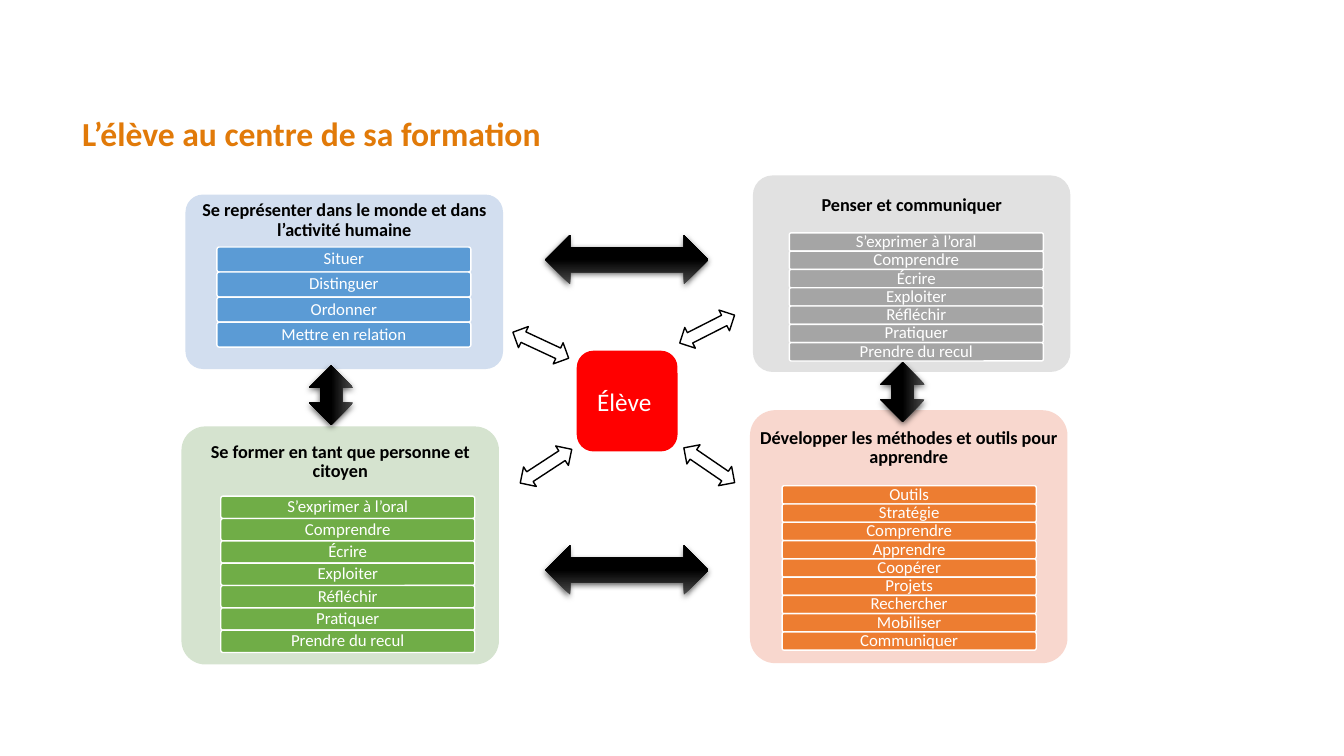
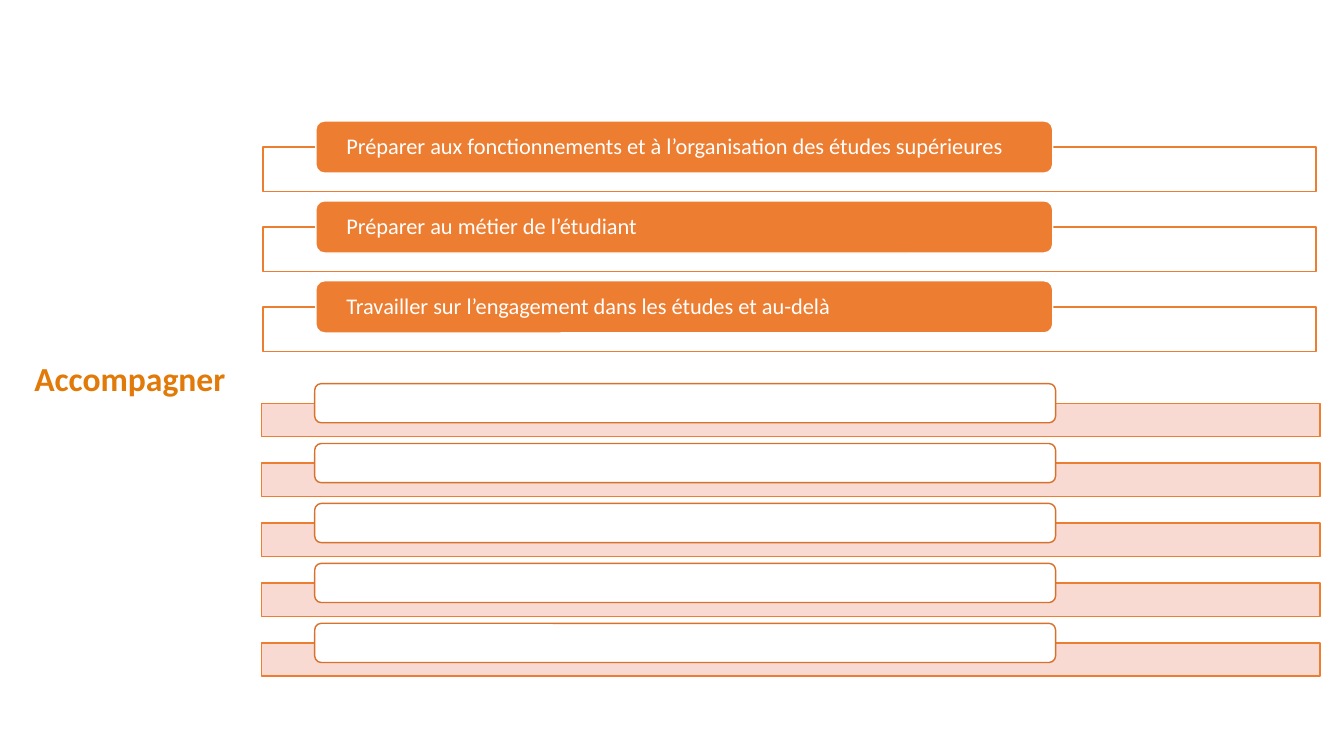
import lxml.etree
import pptx
import pptx.dml.color
import pptx.enum.shapes
import pptx.enum.text
import pptx.oxml.ns
import pptx.util

Pt = pptx.util.Pt
RGBColor = pptx.dml.color.RGBColor
Shapes = pptx.enum.shapes.MSO_SHAPE
Align = pptx.enum.text.PP_ALIGN
Anchor = pptx.enum.text.MSO_ANCHOR
qn = pptx.oxml.ns.qn

FONT = "Calibri"
BLACK = RGBColor(0x00, 0x00, 0x00)
CHARCOAL = RGBColor(0x4B, 0x4B, 0x4B)
WHITE = RGBColor(0xFF, 0xFF, 0xFF)
RED = RGBColor(0xFF, 0x00, 0x00)
TITLE_ORANGE = RGBColor(0xE1, 0x7A, 0x09)
ORANGE = RGBColor(0xED, 0x7D, 0x31)
DARK_ORANGE = RGBColor(0xD7, 0x71, 0x2C)
PALE_ORANGE = RGBColor(0xF8, 0xD7, 0xCE)
BLUE = RGBColor(0x5B, 0x9B, 0xD5)
PALE_BLUE = RGBColor(0xD2, 0xDE, 0xEF)
GREEN = RGBColor(0x70, 0xAD, 0x47)
PALE_GREEN = RGBColor(0xD5, 0xE3, 0xCF)
GREY = RGBColor(0xA5, 0xA5, 0xA5)
PALE_GREY = RGBColor(0xE1, 0xE1, 0xE1)

SPEAKING_SKILLS = [
    "S’exprimer à l’oral", "Comprendre", "Écrire", "Exploiter",
    "Réfléchir", "Pratiquer", "Prendre du recul",
]
WORLD_SKILLS = ["Situer", "Distinguer", "Ordonner", "Mettre en relation"]
METHOD_SKILLS = [
    "Outils", "Stratégie", "Comprendre", "Apprendre", "Coopérer",
    "Projets", "Rechercher", "Mobiliser", "Communiquer",
]


def points(box):
    return [Pt(round(length, 2)) for length in box]


def write_text(shape, text, size, color, bold=False, align=Align.CENTER,
               anchor=Anchor.MIDDLE, margins=(2, 0), spacing=0.9):
    frame = shape.text_frame
    frame.word_wrap = True
    frame.vertical_anchor = anchor
    frame.margin_left = frame.margin_right = Pt(margins[0])
    frame.margin_top = frame.margin_bottom = Pt(margins[1])
    paragraph = frame.paragraphs[0]
    paragraph.alignment = align
    paragraph.line_spacing = spacing
    run = paragraph.add_run()
    run.text = text
    run.font.name = FONT
    run.font.size = Pt(size)
    run.font.bold = bold
    run.font.color.rgb = color


def add_box(slide, kind, box, fill, line=None, adjustment=None):
    shape = slide.shapes.add_shape(kind, *points(box))
    shape.fill.solid()
    shape.fill.fore_color.rgb = fill
    if line is None:
        shape.line.fill.background()
    else:
        shape.line.color.rgb = line
        shape.line.width = Pt(1)
    shape.shadow.inherit = False
    if adjustment is not None:
        shape.adjustments[0] = adjustment
    return shape


def add_titled_slide(presentation, title, box, align):
    slide = presentation.slides.add_slide(presentation.slide_layouts[5])
    placeholder = slide.shapes.title
    placeholder.left, placeholder.top, placeholder.width, placeholder.height = points(box)
    write_text(placeholder, title, 24, TITLE_ORANGE, True, align,
               Anchor.TOP, (7.2, 3.6), 1.0)
    return slide


def add_skill_card(slide, box, heading, heading_height, skills, row_offset, row_height,
                   pale, strong):
    left, top, width, height = box
    add_box(slide, Shapes.ROUNDED_RECTANGLE, box, pale, adjustment=0.1)
    heading_box = slide.shapes.add_textbox(*points((left, top, width, heading_height)))
    write_text(heading_box, heading, 13, BLACK, True, margins=(3.6, 3.6))
    for index, skill in enumerate(skills):
        row_box = (left + row_offset[0], top + row_offset[1] + index * row_height,
                   width * 0.8, row_height)
        row = add_box(slide, Shapes.ROUNDED_RECTANGLE, row_box, strong, WHITE, 0.1)
        write_text(row, skill, 12, WHITE)


def add_white_arrow(slide, box, rotation):
    arrow = add_box(slide, Shapes.LEFT_RIGHT_ARROW, box, WHITE, BLACK)
    arrow.rotation = rotation


def add_black_arrow(slide, box, rotation):
    arrow = add_box(slide, Shapes.LEFT_RIGHT_ARROW, box, BLACK)
    arrow.rotation = rotation
    arrow.fill.gradient()
    arrow.fill.gradient_angle = 270
    for stop, color, position in zip(arrow.fill.gradient_stops, (CHARCOAL, BLACK), (0, 0.5)):
        stop.color.rgb = color
        stop.position = position
    effects = arrow.element.spPr.find(qn("a:effectLst"))
    shadow = lxml.etree.SubElement(
        effects, qn("a:outerShdw"), blurRad=str(Pt(4.5)), dist=str(Pt(1.5)),
        dir="5400000", rotWithShape="0")
    color = lxml.etree.SubElement(shadow, qn("a:srgbClr"), val=str(BLACK))
    lxml.etree.SubElement(color, qn("a:alpha"), val="63000")


def add_band_list(slide, box, labels, band_fill, tab_fill, tab_line):
    left, top, width, height = box
    tab_height = height / ((len(labels) - 1) * 1.53 + 1.35)
    for index, label in enumerate(labels):
        tab_top = top + index * tab_height * 1.53
        band_box = (left, tab_top + tab_height / 2, width, tab_height * 0.85)
        band = add_box(slide, Shapes.RECTANGLE, band_box, band_fill, ORANGE)
        color = band.element.spPr.find(qn("a:solidFill"))[0]
        lxml.etree.SubElement(color, qn("a:alpha"), val="90000")
        tab_box = (left + width * 0.05, tab_top, width * 0.7, tab_height)
        tab = add_box(slide, Shapes.ROUNDED_RECTANGLE, tab_box, tab_fill, tab_line)
        if label:
            write_text(tab, label, 16, WHITE, align=Align.LEFT, margins=(20, 0))


def build_student_slide(presentation):
    slide = add_titled_slide(presentation, "L’élève au centre de sa formation",
                             (33, 77, 379, 36), Align.CENTER)
    student = add_box(slide, Shapes.ROUNDED_RECTANGLE, (412, 250.5, 72, 72), RED)
    write_text(student, "Élève ", 18, WHITE, spacing=1.0)
    for left, top, rotation in [(364.3, 238.3, 25), (483.1, 226.8, 153),
                                (484.6, 324, 214.4), (368, 324.7, 326.8)]:
        add_white_arrow(slide, (left, top, 44, 16.6), rotation)
    cards = [
        ((132.5, 139, 226.8, 124.6), "Se représenter dans le monde et dans l’activité humaine",
         37.4, WORLD_SKILLS, (22.4, 37.4), 17.9, PALE_BLUE, BLUE),
        ((129.6, 304.6, 226.8, 170), "Se former en tant que personne et citoyen",
         51, SPEAKING_SKILLS, (28.1, 49.8), 15.95, PALE_GREEN, GREEN),
        ((537.8, 125.3, 226.8, 140.4), "Penser et communiquer",
         42.5, SPEAKING_SKILLS, (26, 41), 13.08, PALE_GREY, GREY),
        ((535.7, 293, 226.8, 180.7), "Développer les méthodes et outils pour apprendre",
         54, METHOD_SKILLS, (23, 54), 13.05, PALE_ORANGE, ORANGE),
    ]
    for card in cards:
        add_skill_card(slide, *card)
    for top in (167.8, 389.5):
        add_black_arrow(slide, (389.5, top, 116.6, 35.3), 180)
    for left, top in [(623.5, 264.2), (215.3, 266.4)]:
        add_black_arrow(slide, (left, top, 42.5, 31.7), 90)


def build_support_slide(presentation):
    slide = add_titled_slide(presentation, "Accompagner", (17.3, 252, 160, 36), Align.LEFT)
    goals = [
        "Préparer aux fonctionnements et à l’organisation des études supérieures",
        "Préparer au métier de l’étudiant",
        "Travailler sur l’engagement dans les études et au-delà",
    ]
    add_band_list(slide, (188, 86.4, 752, 164.5), goals, WHITE, ORANGE, WHITE)
    add_band_list(slide, (187, 274, 756, 209), [""] * 5, PALE_ORANGE, WHITE, DARK_ORANGE)


def main():
    presentation = pptx.Presentation()
    presentation.slide_width = Pt(960)
    presentation.slide_height = Pt(540)
    build_student_slide(presentation)
    build_support_slide(presentation)
    presentation.save("out.pptx")


if __name__ == "__main__":
    main()
